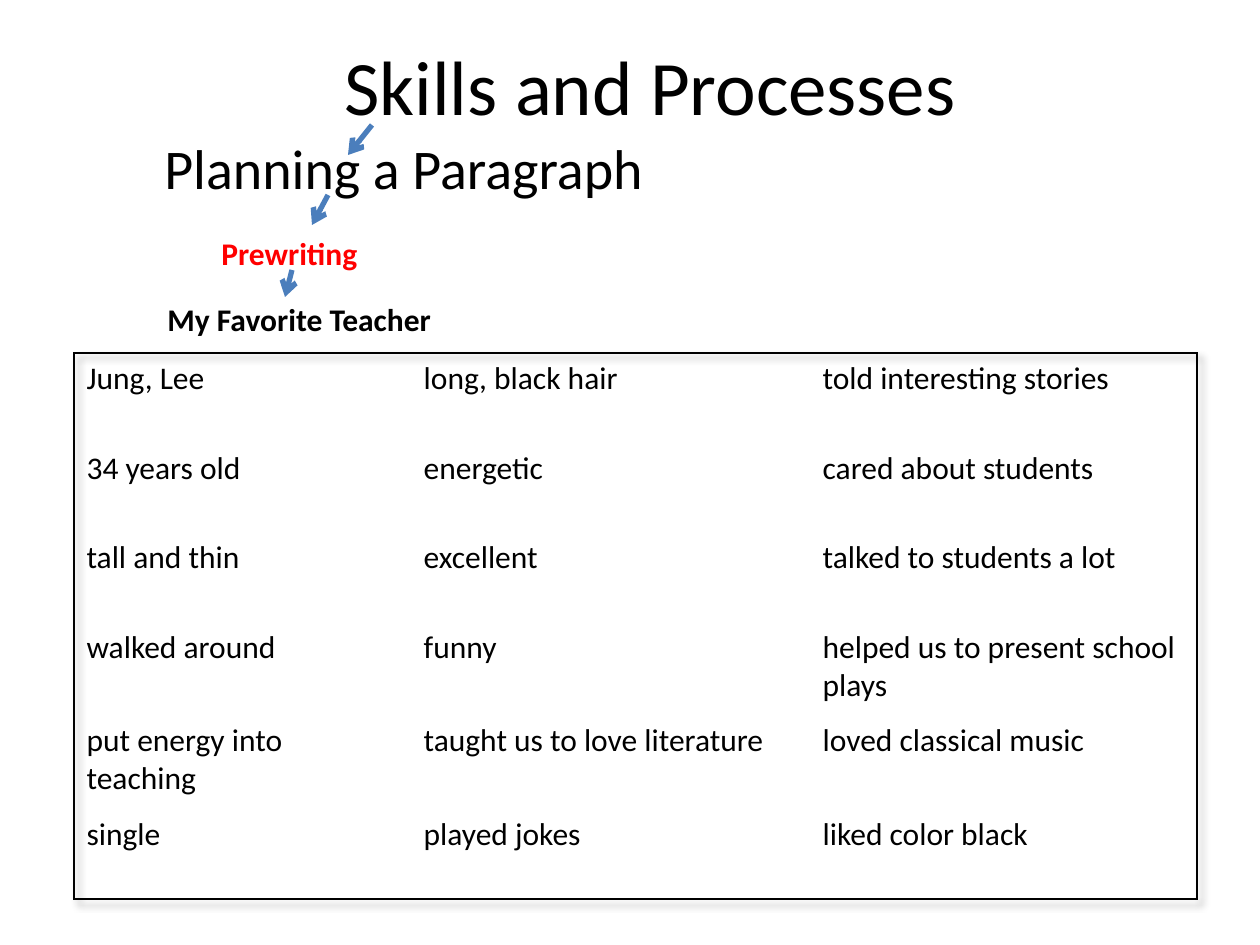
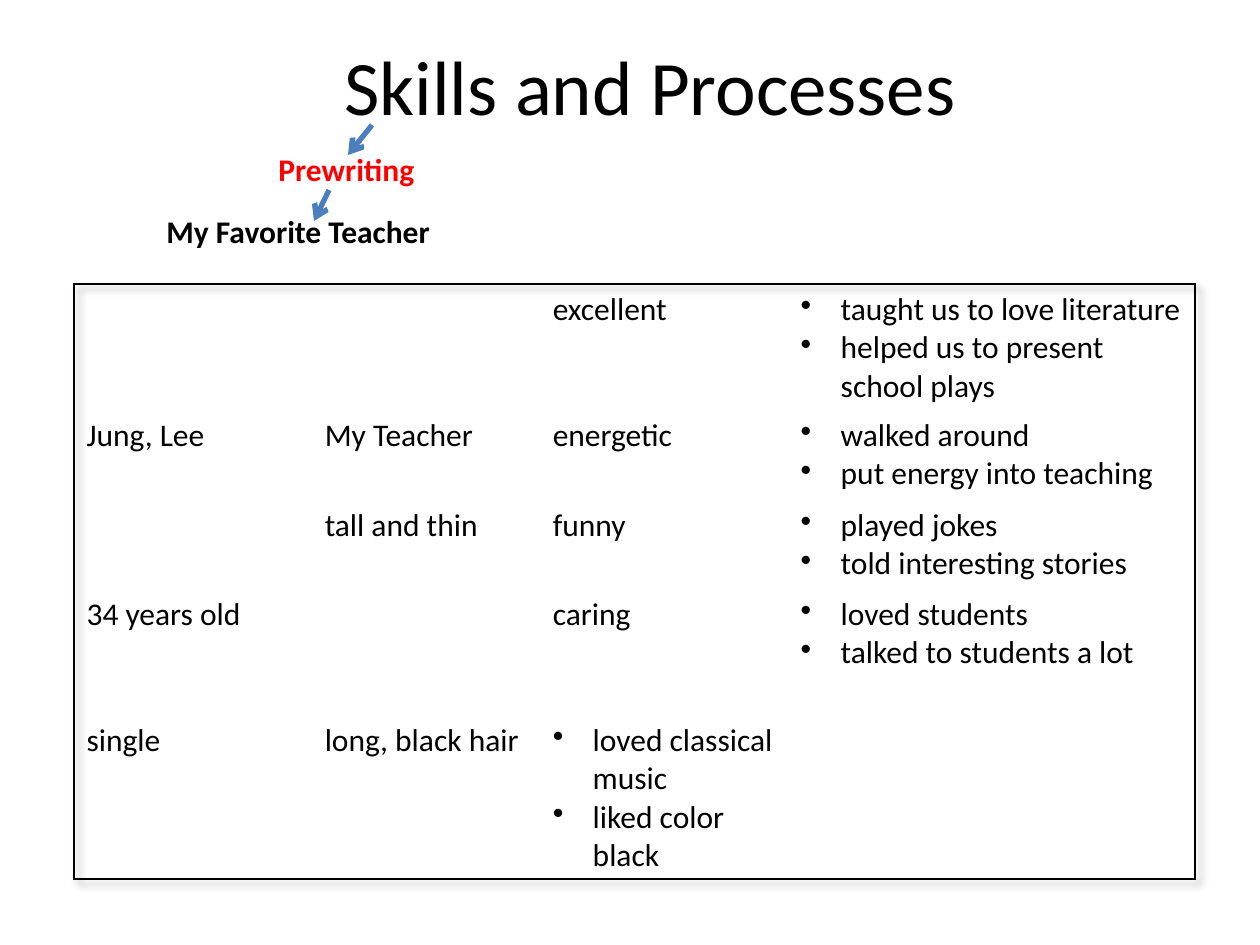
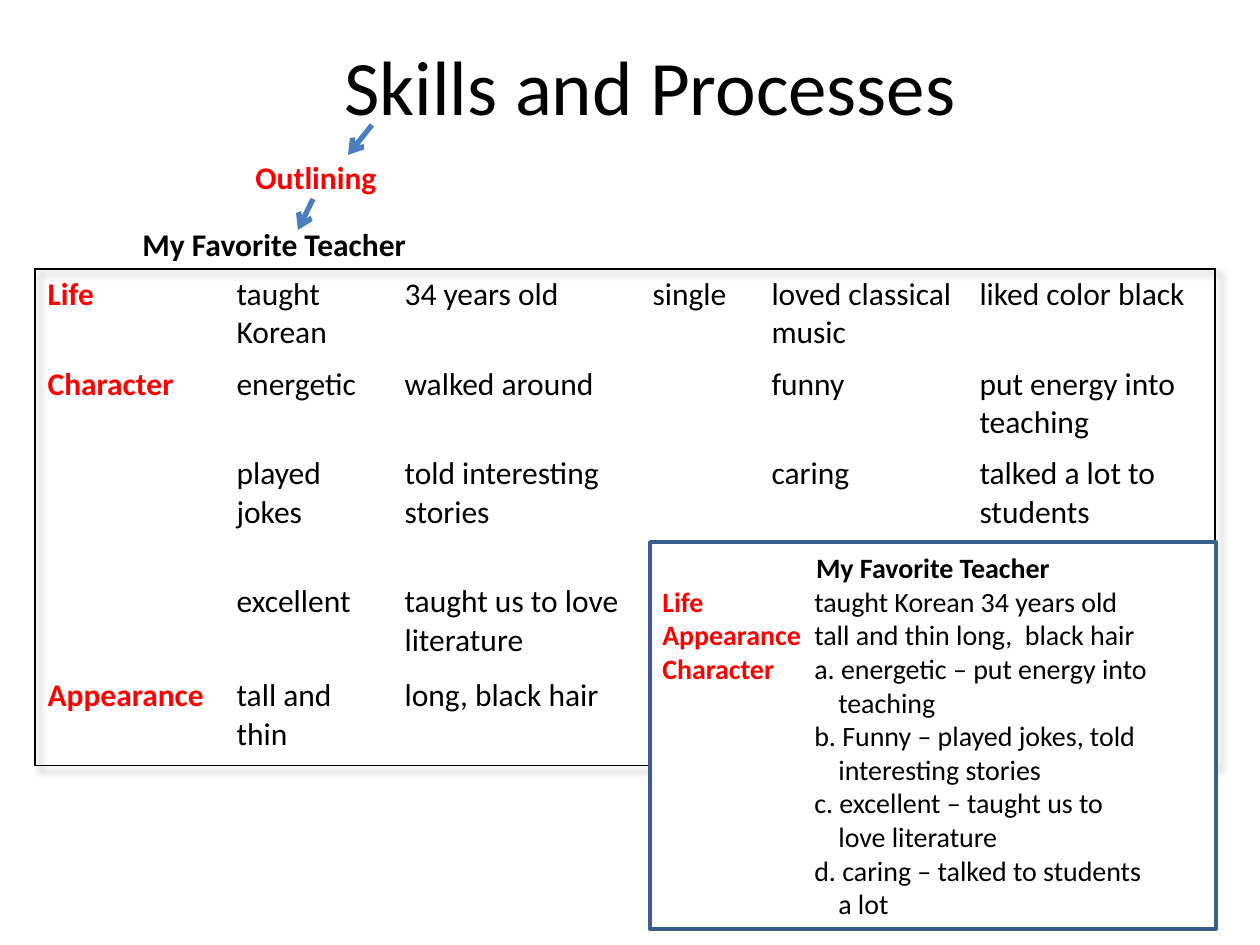
from lxml.etree import SubElement
from pptx import Presentation
from pptx.dml.color import RGBColor
from pptx.enum.shapes import MSO_CONNECTOR, MSO_SHAPE
from pptx.enum.text import MSO_ANCHOR, MSO_AUTO_SIZE, PP_ALIGN
from pptx.oxml import parse_xml
from pptx.oxml.ns import qn
from pptx.util import Emu, Pt

SCALE = 914400 / 126
FONT = "Calibri"
HEX = {"ink": "000000", "key": "FF0000", "arrow": "4B7EBC",
       "edge": "3A5F8C", "paper": "FFFFFF"}
NS = 'xmlns:a="http://schemas.openxmlformats.org/drawingml/2006/main"'
PLAIN = "{2D5ABB26-0587-4C30-8999-92F81FD0307C}"  # table style without grid
HEADS = ("Life", "Character", "Appearance")
TOPIC = "My Favorite Teacher"


def px(n):
    return Emu(round(n * SCALE))


def tint(name):
    return RGBColor.from_string(HEX[name])


def style(font, size, color="ink", bold=False):
    font.name, font.size, font.bold = FONT, Pt(size), bold
    font.color.rgb = tint(color)


def indent(para, left, first=0):
    props = para._p.get_or_add_pPr()
    props.set("marL", str(px(left)))
    props.set("indent", str(px(first)))
    return props


class Deck:
    def __init__(self):
        self.prs = Presentation()
        self.prs.slide_width, self.prs.slide_height = px(1260), px(945)
        self.slide = None

    def page(self, title):
        self.slide = self.prs.slides.add_slide(self.prs.slide_layouts[5])
        box = self.slide.shapes.title
        box.left, box.top, box.width, box.height = map(px, (115, 15, 1071, 139))
        frame = box.text_frame
        frame.text = title
        frame.auto_size = MSO_AUTO_SIZE.NONE
        frame.vertical_anchor = MSO_ANCHOR.MIDDLE
        para = frame.paragraphs[0]
        para.alignment = PP_ALIGN.CENTER
        style(para.font, 44)
        self.arrow(372, 125, 348, 155)

    def label(self, text, x, y, w, h=50, size=18, color="ink", bold=True):
        box = self.slide.shapes.add_textbox(*map(px, (x, y, w, h)))
        box.text_frame.text = text
        style(box.text_frame.paragraphs[0].font, size, color, bold)

    def arrow(self, x1, y1, x2, y2):
        line = self.slide.shapes.add_connector(
            MSO_CONNECTOR.STRAIGHT, *map(px, (x1, y1, x2, y2)))
        line.line.color.rgb = tint("arrow")
        line.line.width = Pt(3)
        SubElement(line.line._get_or_add_ln(), qn("a:tailEnd"), type="arrow")
        SubElement(line._element.spPr, qn("a:effectLst"))

    def grid(self, x, y, cols, rows, data):
        table = self.slide.shapes.add_table(
            len(rows), len(cols),
            *map(px, (x, y, sum(cols), sum(rows)))).table
        table.first_row = table.horz_banding = False
        props = table._tbl.tblPr
        props.find(qn("a:tableStyleId")).text = PLAIN
        props.insert(0, parse_xml(
            f'<a:effectLst {NS}><a:outerShdw blurRad="50800" dist="50800" '
            f'dir="2700000"><a:srgbClr val="{HEX["ink"]}"><a:alpha '
            'val="40000"/></a:srgbClr></a:outerShdw></a:effectLst>'))
        for col, width in zip(table.columns, cols):
            col.width = px(width)
        for row, height in zip(table.rows, rows):
            row.height = px(height)
        for r, line in enumerate(data):
            for c, text in enumerate(line):
                cell = table.cell(r, c)
                self.fill(cell, text)
                self.frame(cell, {"lnL": c == 0, "lnR": c == len(cols) - 1,
                                  "lnT": r == 0, "lnB": r == len(rows) - 1})

    def fill(self, cell, text):
        listed = isinstance(text, list)
        cell.text = "\n".join(text) if listed else text
        head = text in HEADS
        for para in cell.text_frame.paragraphs:
            style(para.font, 18, "key" if head else "ink", head)
            if listed:
                props = indent(para, 40, -40)
                props.insert(0, parse_xml(f'<a:buChar {NS} char="•"/>'))

    def frame(self, cell, sides):
        cell.fill.background()
        props = cell._tc.get_or_add_tcPr()
        drawn = [side for side, shown in sides.items() if shown]
        for i, side in enumerate(drawn):
            props.insert(i, parse_xml(
                f'<a:{side} {NS} w="12700"><a:solidFill><a:srgbClr '
                f'val="{HEX["ink"]}"/></a:solidFill></a:{side}>'))

    def panel(self, x, y, w, h, title, lines):
        box = self.slide.shapes.add_shape(
            MSO_SHAPE.RECTANGLE, *map(px, (x, y, w, h)))
        box.shadow.inherit = False
        box.fill.solid()
        box.fill.fore_color.rgb = tint("paper")
        box.line.color.rgb = tint("edge")
        box.line.width = Pt(2)
        frame = box.text_frame
        frame.word_wrap = True
        frame.vertical_anchor = MSO_ANCHOR.MIDDLE
        para = frame.paragraphs[0]
        para.text = title
        para.alignment = PP_ALIGN.CENTER
        style(para.font, 16, bold=True)
        for head, text, left in lines:
            para = frame.add_paragraph()
            para.alignment = PP_ALIGN.LEFT
            indent(para, left, -left if head else 0)
            style(para.font, 16)
            if head:
                run = para.add_run()
                run.text = head
                style(run.font, 16, "key", True)
                text = "\t" + text
            run = para.add_run()
            run.text = text


def main():
    deck = Deck()
    title = "Skills and Processes"

    # Slide 1: collecting ideas
    deck.page(title)
    deck.label("Planning a Paragraph", 152, 127, 882, 100, 32, bold=False)
    deck.label(TOPIC, 155, 294, 291)
    deck.grid(74, 353, [307, 30, 368, 31, 387], [90, 89, 90, 93, 94, 90], [
        ["Jung, Lee", "", "long, black hair", "", "told interesting stories"],
        ["34 years old", "", "energetic", "", "cared about students"],
        ["tall and thin", "", "excellent", "", "talked to students a lot"],
        ["walked around", "", "funny", "",
         "helped us to present school plays"],
        ["put energy into teaching", "", "taught us to love literature", "",
         "loved classical music"],
        ["single", "", "played jokes", "", "liked color black"]])
    deck.arrow(328, 195, 312, 225)
    deck.label("Prewriting", 209, 228, 163, color="key")
    deck.arrow(292, 270, 285, 297)

    # Slide 2: grouping ideas
    deck.page(title)
    deck.label(TOPIC, 154, 206, 291)
    deck.grid(74, 284, [208, 30, 228, 248, 407], [126, 90, 89, 126, 164], [
        ["", "", "", "excellent", ["taught us to love literature",
                                   "helped us to present school plays"]],
        ["Jung, Lee", "", "My Teacher", "energetic",
         ["walked around", "put energy into teaching"]],
        ["", "", "tall and thin", "funny",
         ["played jokes", "told interesting stories"]],
        ["34 years old", "", "", "caring",
         ["loved students", "talked to students a lot"]],
        ["single", "", "long, black hair",
         ["loved classical music", "liked color black"], ""]])
    deck.label("Prewriting", 266, 144, 163, color="key")
    deck.arrow(329, 190, 314, 221)

    # Slide 3: outlining
    deck.page(title)
    deck.grid(35, 269, [189, 168, 248, 119, 208, 248], [90, 89, 128, 94, 95], [
        ["Life", "taught Korean", "34 years old", "single",
         "loved classical music", "liked color black"],
        ["Character", "energetic", "walked around", "", "funny",
         "put energy into teaching"],
        ["", "played jokes", "told interesting stories", "", "caring",
         "talked a lot to students"],
        ["", "excellent", "taught us to love literature", "", "", ""],
        ["Appearance", "tall and thin", "long, black hair", "", "", ""]])
    deck.label(TOPIC, 130, 219, 291)
    deck.label("Outlining", 243, 152, 147, color="key")
    deck.arrow(313, 199, 298, 230)
    item, rest = 152, 176
    deck.panel(650, 542, 566, 387, TOPIC, [
        ("Life", "taught Korean 34 years old", item),
        ("Appearance", "tall and thin long,  black hair", item),
        ("Character", "a. energetic – put energy into", item),
        ("", "teaching", rest),
        ("", "b. Funny – played jokes, told", item),
        ("", "interesting stories", rest),
        ("", "c. excellent – taught us to", item),
        ("", "love literature", rest),
        ("", "d. caring – talked to students", item),
        ("", "a lot", rest)])

    deck.prs.save("out.pptx")


if __name__ == "__main__":
    main()
